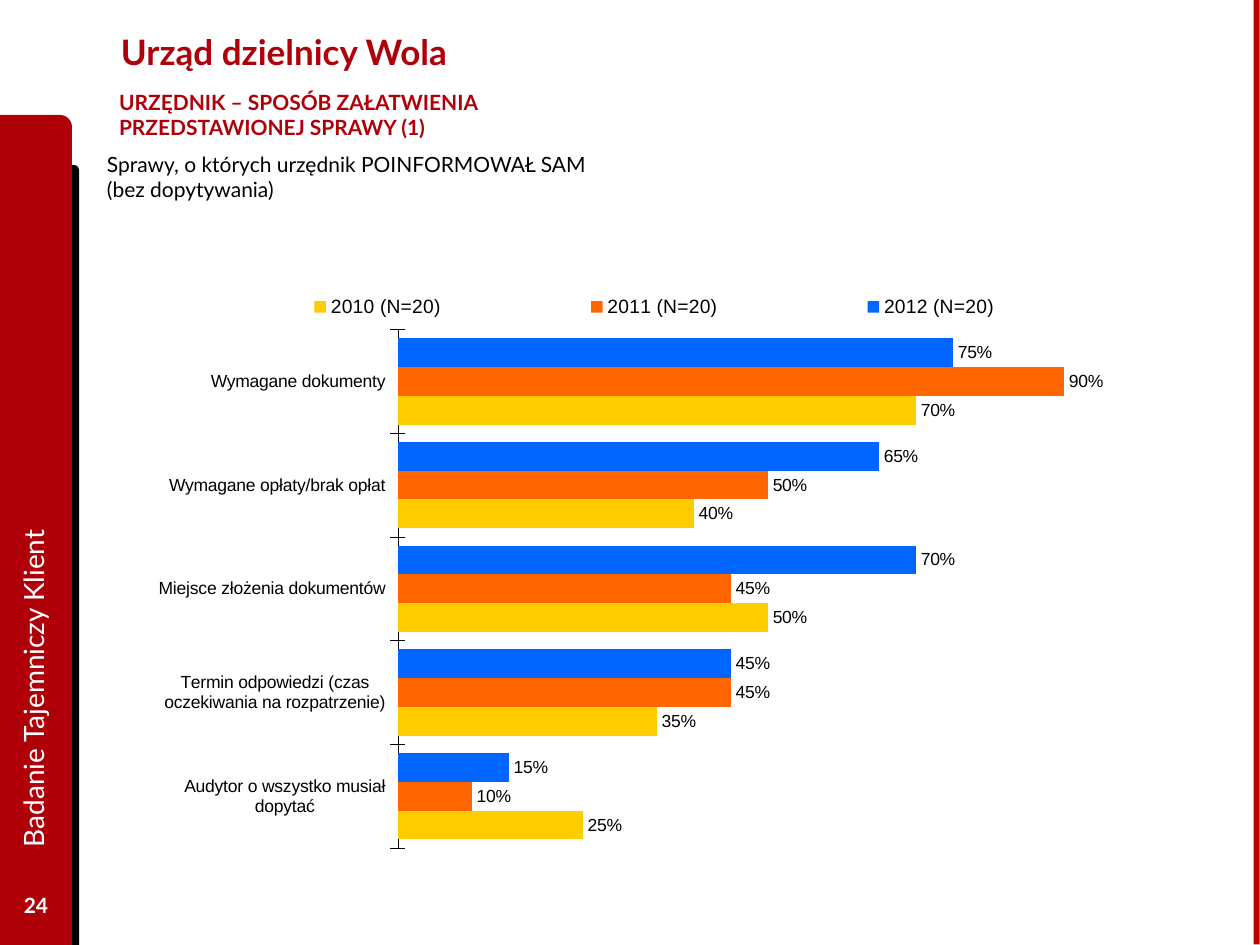
from dataclasses import dataclass

from lxml.etree import SubElement
from pptx import Presentation
from pptx.chart.data import CategoryChartData
from pptx.dml.color import RGBColor
from pptx.enum.chart import (XL_CHART_TYPE, XL_LABEL_POSITION,
                             XL_LEGEND_POSITION, XL_TICK_MARK)
from pptx.enum.shapes import MSO_SHAPE
from pptx.enum.text import MSO_ANCHOR, PP_ALIGN
from pptx.oxml import parse_xml
from pptx.oxml.ns import nsdecls, qn
from pptx.util import Emu, Pt

PX = 914400 / 126


@dataclass(frozen=True)
class Theme:
    red: str = "AF000A"
    edge: str = "BD0000"
    black: str = "000000"
    white: str = "FFFFFF"
    blue: str = "0066FF"
    orange: str = "FF6600"
    yellow: str = "FFCC00"
    font: str = "Lato"
    chart_font: str = "Arial"
    title: int = 20
    side: int = 16
    body: int = 12
    legend: int = 11
    label: int = 10


THEME = Theme()


@dataclass(frozen=True)
class Box:
    x: int
    y: int
    w: int
    h: int

    def emu(self) -> list[Emu]:
        return [px(v) for v in (self.x, self.y, self.w, self.h)]


@dataclass(frozen=True)
class Panel:
    box: Box
    preset: MSO_SHAPE
    color: str
    rotation: int = 0


@dataclass(frozen=True)
class Label:
    box: Box
    text: str
    size: int
    color: str
    bold: bool = False
    anchor: MSO_ANCHOR = MSO_ANCHOR.MIDDLE
    align: PP_ALIGN = PP_ALIGN.LEFT
    rotation: int = 0
    inset: int = 13
    wrap: bool = True


@dataclass(frozen=True)
class Series:
    name: str
    values: tuple[float, ...]
    color: str


PANELS = (
    Panel(Box(49, 165, 30, 780), MSO_SHAPE.ROUND_1_RECTANGLE, THEME.black),
    Panel(Box(0, 115, 72, 830), MSO_SHAPE.ROUND_1_RECTANGLE, THEME.red),
    Panel(Box(784, 469, 945, 6), MSO_SHAPE.RECTANGLE, THEME.edge, rotation=90),
)

LABELS = (
    Label(Box(108, 6, 979, 91), "Urząd dzielnicy Wola", THEME.title, THEME.red, bold=True),
    Label(Box(94, 83, 485, 42), "URZĘDNIK – SPOSÓB ZAŁATWIENIA PRZEDSTAWIONEJ SPRAWY (1)",
          THEME.body, THEME.red, bold=True, anchor=MSO_ANCHOR.TOP, inset=25, wrap=False),
    Label(Box(94, 145, 507, 63),
          "Sprawy, o których urzędnik POINFORMOWAŁ SAM (bez dopytywania)",
          THEME.body, THEME.black, anchor=MSO_ANCHOR.TOP),
    Label(Box(0, 880, 72, 50), "24", THEME.body, THEME.white, bold=True,
          align=PP_ALIGN.CENTER),
    Label(Box(-330, 465, 726, 64), "Badanie Tajemniczy Klient", THEME.side, THEME.white,
          rotation=270),
)

CHART_BOX = Box(151, 284, 987, 570)
CATEGORIES = (
    "Wymagane dokumenty",
    "Wymagane opłaty/brak opłat",
    "Miejsce złożenia dokumentów",
    "Termin odpowiedzi (czas oczekiwania na rozpatrzenie)",
    "Audytor o wszystko musiał dopytać",
)
SERIES = (
    Series("2012 (N=20)", (0.75, 0.65, 0.7, 0.45, 0.15), THEME.blue),
    Series("2011 (N=20)", (0.9, 0.5, 0.45, 0.45, 0.1), THEME.orange),
    Series("2010 (N=20)", (0.7, 0.4, 0.5, 0.35, 0.25), THEME.yellow),
)


def px(value: int) -> Emu:
    return Emu(round(value * PX))


def style_font(font, name: str, size: int, color: str, bold: bool = False) -> None:
    font.name = name
    font.size = Pt(size)
    font.bold = bold
    font.color.rgb = RGBColor.from_string(color)


def draw_panel(s, panel: Panel) -> None:
    sp = s.shapes.add_shape(panel.preset, *panel.box.emu())
    sp.rotation = panel.rotation
    sp.shadow.inherit = False
    sp.fill.solid()
    sp.fill.fore_color.rgb = RGBColor.from_string(panel.color)
    sp.line.fill.background()


def draw_label(s, label: Label) -> None:
    sp = s.shapes.add_textbox(*label.box.emu())
    sp.rotation = label.rotation
    tf = sp.text_frame
    tf.word_wrap = label.wrap
    tf.vertical_anchor = label.anchor
    tf.margin_left = tf.margin_right = px(label.inset)
    p = tf.paragraphs[0]
    p.text = label.text
    p.alignment = label.align
    style_font(p.font, THEME.font, label.size, label.color, label.bold)


def place(parent, index: int, frame: tuple[float, ...], inner: bool = False) -> None:
    for old in parent.findall(qn("c:layout")):
        parent.remove(old)
    layout = parse_xml(f"<c:layout {nsdecls('c')}><c:manualLayout/></c:layout>")
    settings = [("layoutTarget", "inner")] if inner else []
    settings += [("xMode", "edge"), ("yMode", "edge")]
    settings += zip("xywh", map(str, frame))
    for tag, value in settings:
        SubElement(layout[0], qn(f"c:{tag}")).set("val", value)
    parent.insert(index, layout)


def draw_chart(s) -> None:
    data = CategoryChartData(number_format="0%")
    data.categories = CATEGORIES
    for item in SERIES:
        data.add_series(item.name, item.values)
    chart = s.shapes.add_chart(XL_CHART_TYPE.BAR_CLUSTERED, *CHART_BOX.emu(), data).chart
    chart.has_title = False
    style_font(chart.font, THEME.chart_font, THEME.label, THEME.black)

    plot = chart.plots[0]
    plot.gap_width = 60
    plot.overlap = 0
    plot.vary_by_categories = False
    for item, series in zip(SERIES, plot.series):
        series.format.fill.solid()
        series.format.fill.fore_color.rgb = RGBColor.from_string(item.color)
        labels = series.data_labels
        labels.show_value = True
        labels.number_format = "0%"
        labels.number_format_is_linked = False
        labels.position = XL_LABEL_POSITION.OUTSIDE_END
        style_font(labels.font, THEME.chart_font, THEME.label, THEME.black)

    cat = chart.category_axis
    cat.reverse_order = True
    cat.major_tick_mark = XL_TICK_MARK.CROSS
    cat.format.line.color.rgb = RGBColor.from_string(THEME.black)
    cat.format.line.width = Pt(0.25)
    style_font(cat.tick_labels.font, THEME.chart_font, THEME.label, THEME.black)

    val = chart.value_axis
    val.minimum_scale, val.maximum_scale, val.major_unit = 0, 1, 0.2
    val.has_major_gridlines = False
    val.visible = False

    chart.has_legend = True
    legend = chart.legend
    legend.position = XL_LEGEND_POSITION.RIGHT
    legend.include_in_layout = False
    style_font(legend.font, THEME.chart_font, THEME.legend, THEME.black)
    place(legend._element, 1, (0.02, 0, 0.98, 0.08))
    place(chart._chartSpace.chart.plotArea, 0, (0.25, 0.08, 0.75, 0.91), inner=True)


def main() -> None:
    prs = Presentation()
    prs.slide_width, prs.slide_height = px(1260), px(945)
    s = prs.slides.add_slide(prs.slide_layouts[6])
    for panel in PANELS:
        draw_panel(s, panel)
    draw_chart(s)
    for label in LABELS:
        draw_label(s, label)
    prs.save("out.pptx")


if __name__ == "__main__":
    main()
